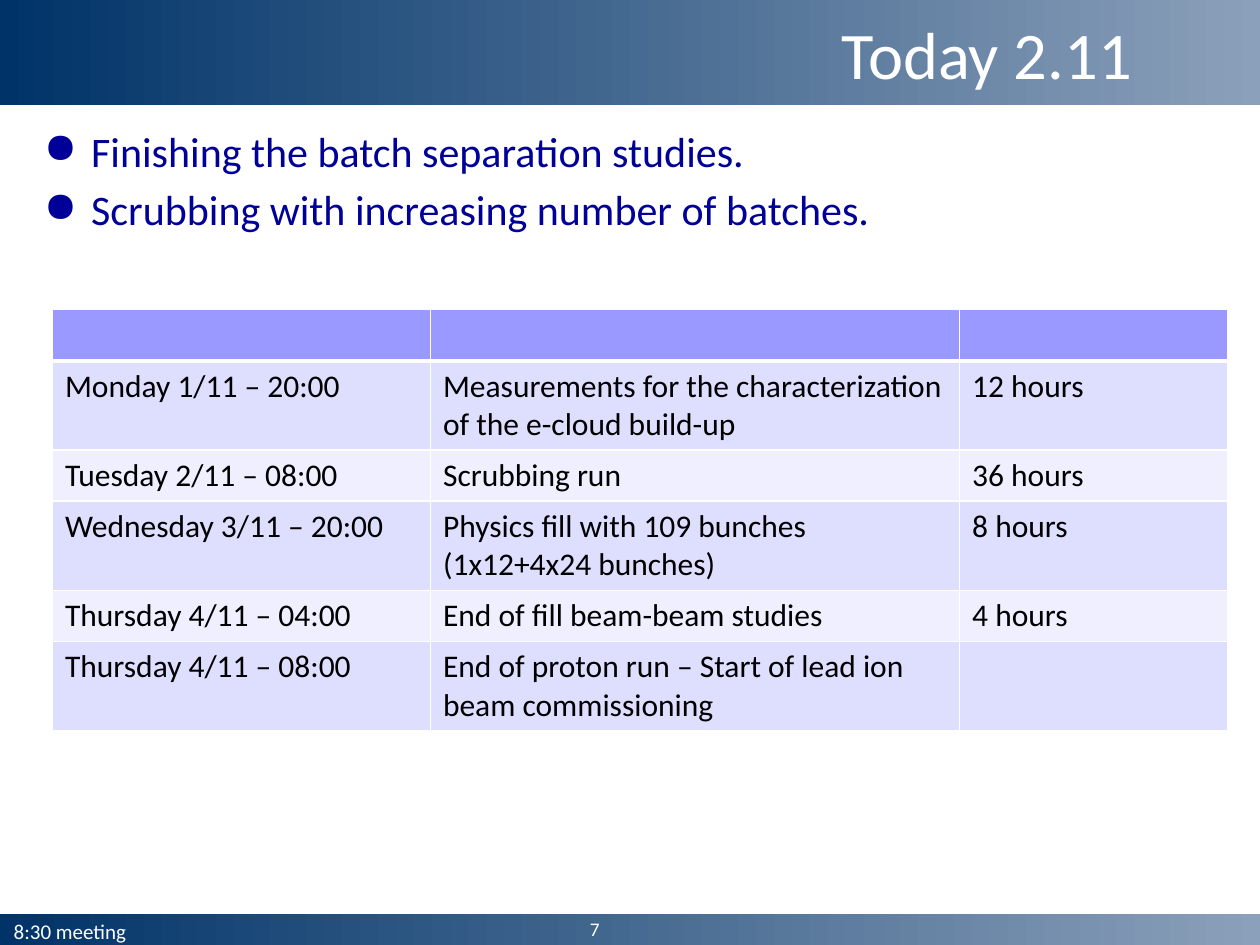
from lxml.etree import SubElement
from pptx import Presentation
from pptx.dml.color import RGBColor
from pptx.enum.shapes import MSO_SHAPE
from pptx.enum.text import MSO_ANCHOR, PP_ALIGN
from pptx.oxml import parse_xml
from pptx.oxml.ns import nsdecls, qn
from pptx.util import Pt

COLORS = {
    "navy": "003368", "haze": "8BA0BA", "white": "FFFFFF", "black": "000000",
    "bullet": "000099", "header": "9999FF", "odd": "DEDEFF", "even": "EFEFFF",
}
FONT = "Calibri"
BULLETS = [
    "Finishing the batch separation studies.",
    "Scrubbing with increasing number of batches.",
]
SCHEDULE = [
    ("", "", ""),
    ("Monday 1/11 – 20:00",
     "Measurements for the characterization of the e-cloud build-up", "12 hours"),
    ("Tuesday 2/11 – 08:00", "Scrubbing run", "36 hours"),
    ("Wednesday 3/11 – 20:00",
     "Physics fill with 109 bunches (1x12+4x24 bunches)", "8 hours"),
    ("Thursday 4/11 – 04:00", "End of fill beam-beam studies", "4 hours"),
    ("Thursday 4/11 – 08:00",
     "End of proton run – Start of lead ion beam commissioning", ""),
]
COLUMN_WIDTHS = [216, 302.4, 153.4]
ROW_HEIGHTS = [29.2, 51, 29.2, 51, 29.2, 51]


def rgb(name):
    return RGBColor.from_string(COLORS[name])


class SlideBuilder:
    """Holds the style and the current slide, and adds each kind of element."""

    def __init__(self, prs):
        self.s = prs.slides.add_slide(prs.slide_layouts[6])

    def set_format(self, target, values):
        for name, value in values.items():
            setattr(target, name, value)

    def add_text(self, p, text, size, color):
        r = p.add_run()
        r.text = text
        self.set_format(r.font, {"name": FONT, "size": Pt(size)})
        r.font.color.rgb = rgb(color)

    def band(self, top, height):
        sp = self.s.shapes.add_shape(
            MSO_SHAPE.RECTANGLE, 0, Pt(top), Pt(720), Pt(height))
        sp.shadow.inherit = False
        sp.line.fill.background()
        sp.fill.gradient()
        sp.fill.gradient_angle = 0
        for stop, position, color in zip(
                sp.fill.gradient_stops, (0, 1), ("navy", "haze")):
            stop.position = position
            stop.color.rgb = rgb(color)

    def text(self, box, text, size, anchor, align=PP_ALIGN.LEFT):
        tf = self.s.shapes.add_textbox(*map(Pt, box)).text_frame
        self.set_format(tf, {"word_wrap": True, "vertical_anchor": anchor})
        p = tf.paragraphs[0]
        p.alignment = align
        self.add_text(p, text, size, "white")

    def bullets(self, box, items):
        sp = self.s.shapes.add_textbox(*map(Pt, box))
        sp.fill.solid()
        sp.fill.fore_color.rgb = rgb("white")
        tf = sp.text_frame
        self.set_format(tf, {"word_wrap": True, "margin_top": Pt(6)})
        for i, item in enumerate(items):
            p = tf.add_paragraph() if i else tf.paragraphs[0]
            pPr = p._p.get_or_add_pPr()
            pPr.set("marL", str(Pt(27)))
            pPr.set("indent", str(Pt(-27)))
            color = SubElement(pPr, qn("a:buClr"))
            SubElement(color, qn("a:srgbClr"), val=COLORS["bullet"])
            SubElement(pPr, qn("a:buChar"), char="●")
            p.space_before = Pt(4.8 if i else 0)
            self.add_text(p, item, 24, "bullet")

    def borders(self, cell, bottom):
        tcPr = cell._tc.get_or_add_tcPr()
        sides = {"lnL": 1, "lnR": 1, "lnT": 1, "lnB": bottom}
        for i, (side, width) in enumerate(sides.items()):
            tcPr.insert(i, parse_xml(
                f'<a:{side} {nsdecls("a")} w="{Pt(width)}"><a:solidFill>'
                f'<a:srgbClr val="{COLORS["white"]}"/></a:solidFill></a:{side}>'))

    def table(self, left, top, rows):
        frame = self.s.shapes.add_table(
            len(rows), len(COLUMN_WIDTHS), Pt(left), Pt(top),
            Pt(sum(COLUMN_WIDTHS)), Pt(sum(ROW_HEIGHTS)))
        table = frame.table
        for column, width in zip(table.columns, COLUMN_WIDTHS):
            column.width = Pt(width)
        for i, (row, height, values) in enumerate(
                zip(table.rows, ROW_HEIGHTS, rows)):
            row.height = Pt(height)
            fill = ("odd" if i % 2 else "even") if i else "header"
            for cell, value in zip(row.cells, values):
                cell.fill.solid()
                cell.fill.fore_color.rgb = rgb(fill)
                self.borders(cell, 1 if i else 3)
                if value:
                    self.add_text(cell.text_frame.paragraphs[0], value, 18, "black")


def main():
    prs = Presentation()
    prs.slide_width, prs.slide_height = Pt(720), Pt(540)
    slide = SlideBuilder(prs)
    slide.band(522, 18)
    slide.band(0, 60)
    slide.text((60, 0, 594, 60), "Today 2.11", 38, MSO_ANCHOR.MIDDLE, PP_ALIGN.RIGHT)
    slide.bullets((18, 65.5, 684, 138), BULLETS)
    slide.text((0.7, 525, 286, 18), "8:30 meeting", 12, MSO_ANCHOR.BOTTOM)
    slide.text((330, 522.7, 90, 18), "7", 11, MSO_ANCHOR.BOTTOM)
    slide.table(30, 177, SCHEDULE)
    prs.save("out.pptx")


if __name__ == "__main__":
    main()
